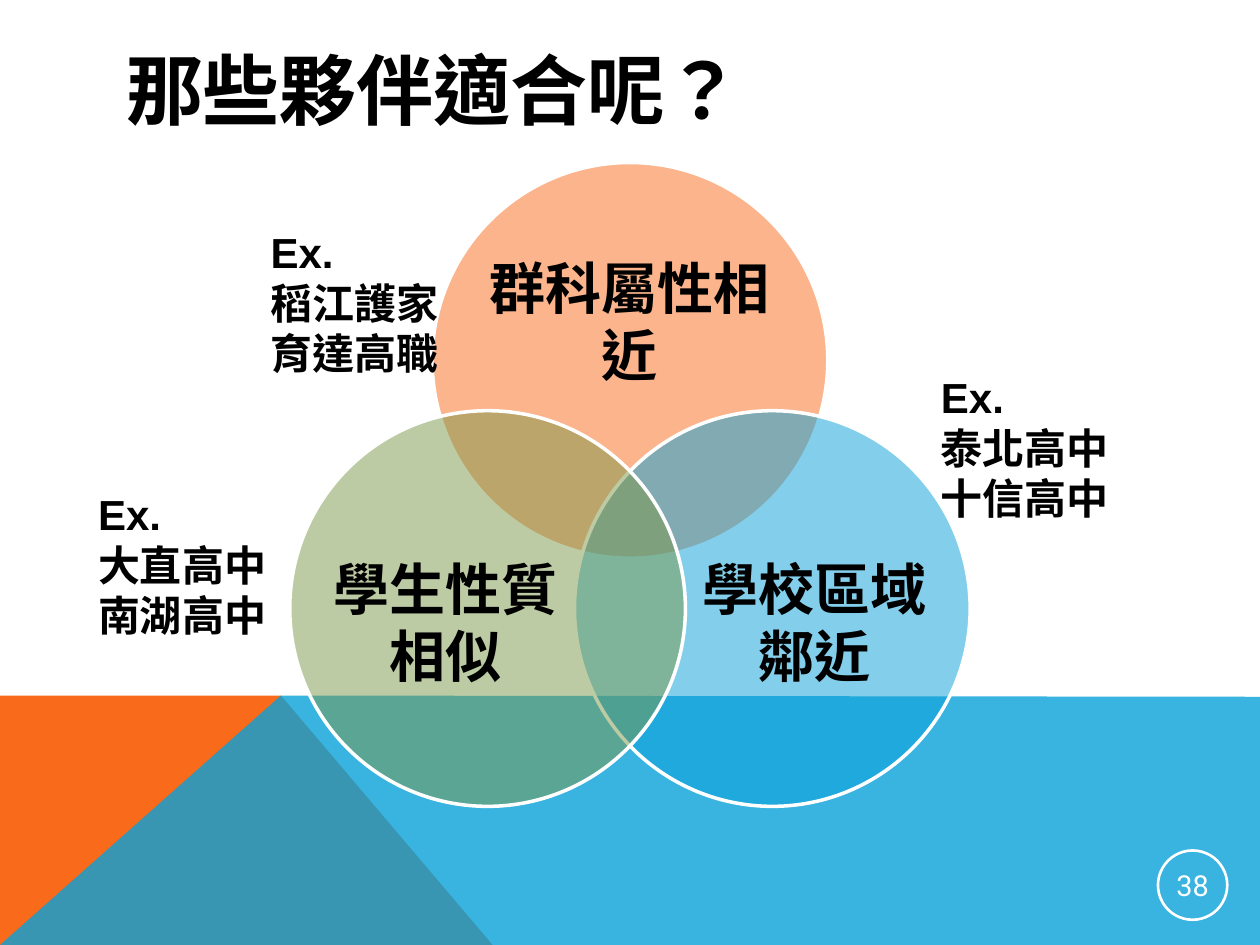
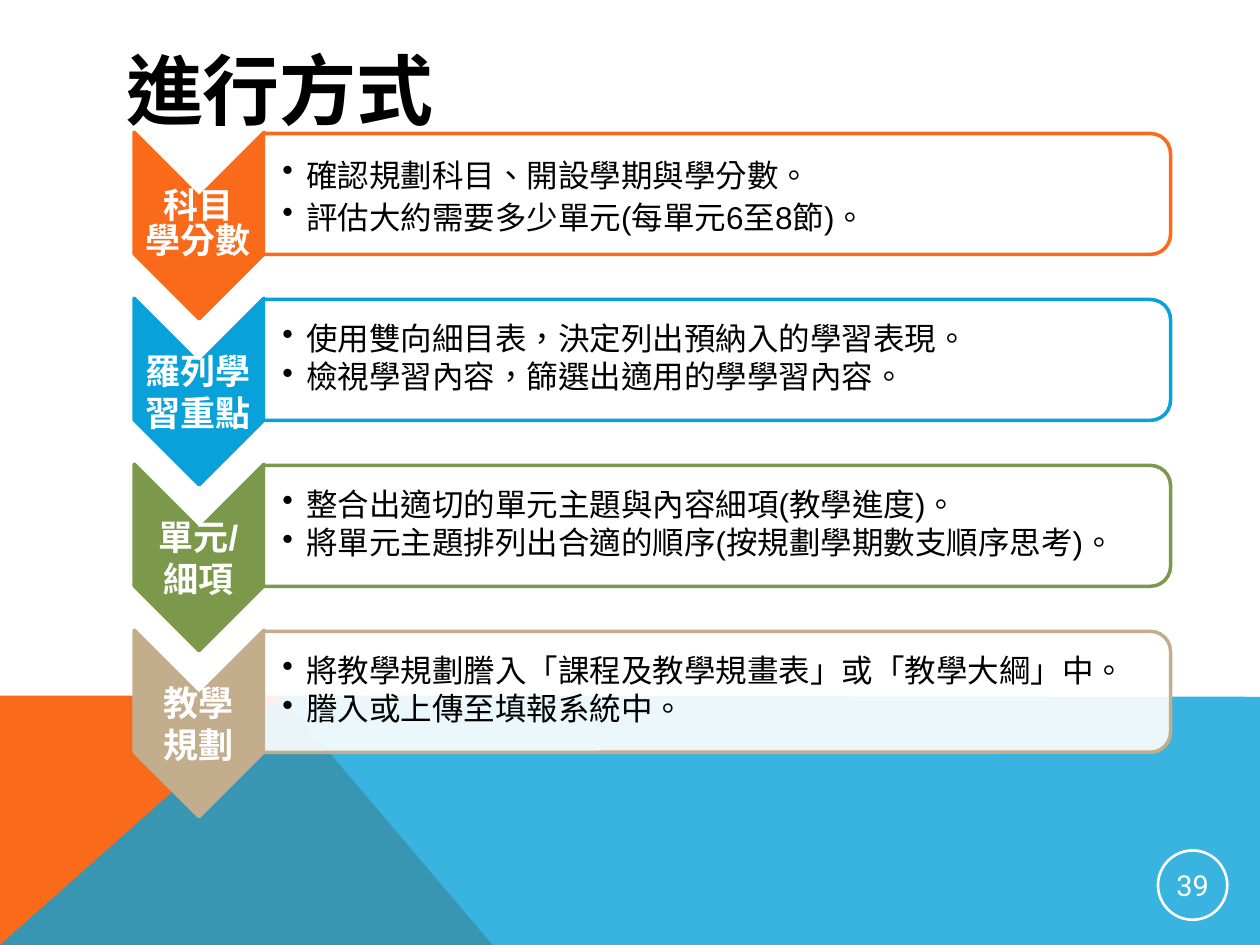
from lxml.etree import SubElement
from pptx import Presentation
from pptx.dml.color import RGBColor
from pptx.enum.lang import MSO_LANGUAGE_ID
from pptx.enum.shapes import MSO_SHAPE
from pptx.enum.text import MSO_ANCHOR, MSO_AUTO_SIZE, PP_ALIGN
from pptx.oxml.ns import qn
from pptx.util import Inches, Pt

# Content
COLORS = {
    "orange": "F96A1B",
    "blue": "08A1D9",
    "green": "7C984A",
    "tan": "C2AD8D",
    "white": "FFFFFF",
    "black": "000000",
}

PARTNER_TITLE = "那些夥伴適合呢？"
# Circle label, colour, circle (left, top), label box (left, top, width, height)
CRITERIA = [
    ("群科屬性相近", "orange", (3.43, 1.29), (3.85, 1.84, 2.3, 1.41)),
    ("學校區域鄰近", "blue", (4.56, 3.26), (5.52, 4.07, 1.89, 1.73)),
    ("學生性質相似", "green", (2.3, 3.26), (2.59, 4.07, 1.89, 1.73)),
]
# Example schools and the (left, top) of their box
EXAMPLES = [
    (["Ex.", "大直高中", "南湖高中"], (0.68, 3.83)),
    (["Ex.", "泰北高中", "十信高中"], (7.37, 2.9)),
    (["Ex.", "稻江護家", "育達高職"], (2.05, 1.75)),
]

STEPS_TITLE = "進行方式"
# Step label, colour, label line spacing, bullet line spacing, bullets
STEPS = [
    ("科目\n學分數", "orange", Pt(20), Pt(24),
     ["確認規劃科目、開設學期與學分數。", "評估大約需要多少單元(每單元6至8節)。"]),
    ("羅列學習重點", "blue", Pt(24), 0.9,
     ["使用雙向細目表，決定列出預納入的學習表現。", "檢視學習內容，篩選出適用的學學習內容。"]),
    ("單元/\n細項", "green", Pt(24), 0.9,
     ["整合出適切的單元主題與內容細項(教學進度)。",
      "將單元主題排列出合適的順序(按規劃學期數支順序思考)。"]),
    ("教學\n規劃", "tan", Pt(24), 0.9,
     ["將教學規劃謄入「課程及教學規畫表」或「教學大綱」中。", "謄入或上傳至填報系統中。"]),
]

# Layout, in inches
BANDS = [
    ("orange", 100, [(0, 7.5), (0, 5.52), (2.23, 5.52), (3.91, 7.5)]),
    ("blue", 80, [(0, 7.5), (2.23, 5.52), (10, 5.53), (10, 7.5)]),
]
CIRCLE_SIZE = 3.14
STEP_PITCH = 1.317


def paint(shape, fill=None, opacity=100, line=None, width=2):
    """Set fill, opacity and outline, without a shadow."""
    shape.shadow.inherit = False
    if fill:
        shape.fill.solid()
        shape.fill.fore_color.rgb = RGBColor.from_string(COLORS[fill])
        if opacity < 100:
            color = shape.fill._xPr.find(qn("a:solidFill"))[0]
            SubElement(color, qn("a:alpha"), val=str(opacity * 1000))
    else:
        shape.fill.background()
    if line:
        shape.line.color.rgb = RGBColor.from_string(COLORS[line])
        shape.line.width = Pt(width)
    else:
        shape.line.fill.background()


def write(shape, lines, size, font="Arial", color="black", bold=False,
          align=PP_ALIGN.LEFT, anchor=MSO_ANCHOR.MIDDLE, insets=None):
    """Fill a shape with uniformly formatted paragraphs and return them."""
    frame = shape.text_frame
    frame.word_wrap = True
    frame.auto_size = MSO_AUTO_SIZE.NONE
    frame.vertical_anchor = anchor
    if insets:
        (frame.margin_left, frame.margin_top,
         frame.margin_right, frame.margin_bottom) = map(Inches, insets)
    for index, line in enumerate(lines):
        paragraph = frame.add_paragraph() if index else frame.paragraphs[0]
        paragraph.text = line
        paragraph.alignment = align
        paragraph.font.name = font
        paragraph.font.size = Pt(size)
        paragraph.font.bold = bold
        paragraph.font.color.rgb = RGBColor.from_string(COLORS[color])
        paragraph.font.language_id = MSO_LANGUAGE_ID.TRADITIONAL_CHINESE
    return frame.paragraphs


def add_box(slide, *box):
    return slide.shapes.add_textbox(*map(Inches, box))


def add_preset(slide, kind, *box):
    return slide.shapes.add_shape(kind, *map(Inches, box))


def add_turned(slide, kind, center_x, center_y, width, height):
    """Add a shape turned a quarter clockwise about its centre."""
    shape = add_preset(slide, kind, center_x - width / 2,
                       center_y - height / 2, width, height)
    shape.rotation = 90
    return shape


def add_bullet(paragraph):
    properties = paragraph._p.get_or_add_pPr()
    properties.set("marL", str(Inches(0.19)))
    properties.set("indent", str(Inches(-0.19)))
    bullet = properties.makeelement(qn("a:buChar"), {"char": "•"})
    properties.find(qn("a:defRPr")).addprevious(bullet)


def add_base_slide(presentation, title, number):
    """Add a slide with the bands, title and page number."""
    slide = presentation.slides.add_slide(presentation.slide_layouts[5])
    for color, opacity, corners in BANDS:
        points = [(Inches(x), Inches(y)) for x, y in corners]
        builder = slide.shapes.build_freeform(*points[0])
        builder.add_line_segments(points[1:], close=True)
        paint(builder.convert_to_shape(), color, opacity)

    heading = slide.shapes.title
    heading.left, heading.top, heading.width, heading.height = map(
        Inches, (0.9, 0.4, 8.22, 0.6))
    write(heading, [title], 44, "Roboto", bold=True)

    badge = add_preset(slide, MSO_SHAPE.OVAL, 9.19, 6.75, 0.55, 0.55)
    paint(badge, line="white", width=1.5)
    write(badge, [str(number)], 16.5, "Roboto", "white",
          align=PP_ALIGN.CENTER, insets=(0.01,) * 4)
    return slide


def build_partner_slide(presentation):
    slide = add_base_slide(presentation, PARTNER_TITLE, 38)
    # Overlapping circles
    for label, color, position, label_box in CRITERIA:
        circle = add_preset(slide, MSO_SHAPE.OVAL, *position,
                            CIRCLE_SIZE, CIRCLE_SIZE)
        paint(circle, color, 50, "white")
        write(add_box(slide, *label_box), [label], 32, bold=True,
              align=PP_ALIGN.CENTER, insets=(0,) * 4)
    # Example schools
    for lines, position in EXAMPLES:
        write(add_box(slide, *position, 2.07, 1.31), lines, 24, bold=True,
              anchor=MSO_ANCHOR.TOP)


def build_steps_slide(presentation):
    slide = add_base_slide(presentation, STEPS_TITLE, 39)
    for index, (label, color, label_spacing, spacing, bullets) in enumerate(STEPS):
        offset = index * STEP_PITCH
        # Chevron with its label
        chevron = add_turned(slide, MSO_SHAPE.CHEVRON, 1.58, 1.79 + offset,
                             1.48, 1.03)
        paint(chevron, color, line=color)
        caption = write(add_box(slide, 1.06, 1.57 + offset, 1.03, 0.44), [label],
                        20, color="white", bold=True, align=PP_ALIGN.CENTER,
                        insets=(0.01,) * 4)
        caption[0].line_spacing = label_spacing
        # Panel with its bullets
        panel = add_turned(slide, MSO_SHAPE.ROUND_2_SAME_RECTANGLE, 5.69,
                           1.54 + offset, 0.96, 7.2)
        paint(panel, "white", 90, color)
        details = write(add_box(slide, 2.1, 1.1 + offset, 7.15, 0.87), bullets,
                        18, insets=(0.14, 0.01, 0.01, 0.01))
        for paragraph in details:
            paragraph.level = 1
            paragraph.line_spacing = spacing
            if spacing == 0.9:
                paragraph.space_after = Pt(2.7)
            add_bullet(paragraph)


def main():
    presentation = Presentation()
    presentation.slide_width = Inches(10)
    presentation.slide_height = Inches(7.5)
    build_partner_slide(presentation)
    build_steps_slide(presentation)
    presentation.save("out.pptx")


if __name__ == "__main__":
    main()
